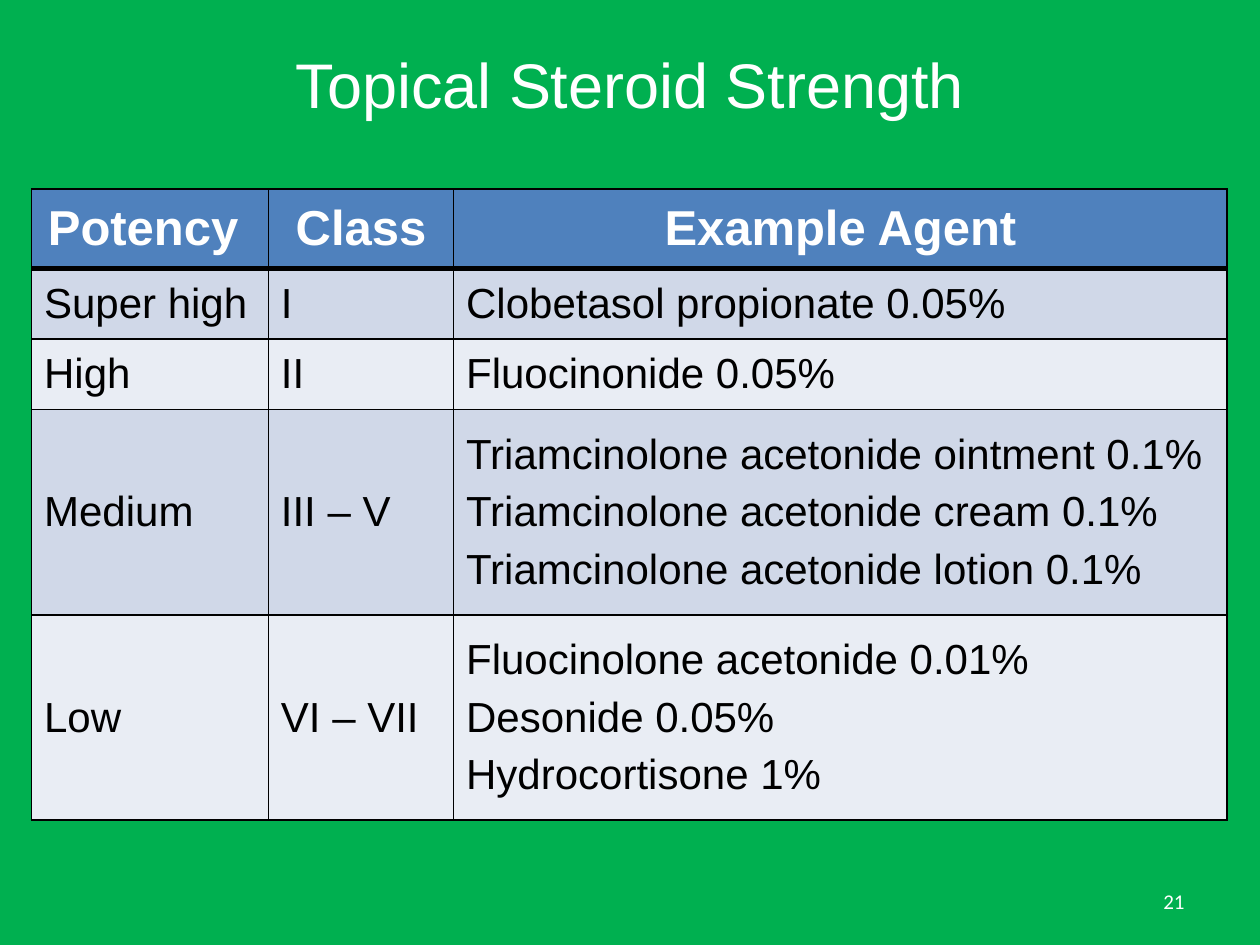
from lxml import etree
from pptx import Presentation
from pptx.dml.color import RGBColor
from pptx.enum.text import MSO_ANCHOR, PP_ALIGN
from pptx.oxml.ns import qn
from pptx.util import Inches, Pt

MIDDLE = MSO_ANCHOR.MIDDLE
LEFT, CENTER, RIGHT = PP_ALIGN.LEFT, PP_ALIGN.CENTER, PP_ALIGN.RIGHT

COLORS = {
    "background": "00B050",
    "header": "4F81BD",
    "odd_row": "D0D8E8",
    "even_row": "E9EDF4",
    "white": "FFFFFF",
    "black": "000000",
}

ROWS = [
    ("Potency ", "Class", "Example Agent"),
    ("Super high", "I", "Clobetasol propionate 0.05%"),
    ("High", "II", "Fluocinonide 0.05%"),
    ("Medium", "III – V",
     "Triamcinolone acetonide ointment 0.1%\n"
     "Triamcinolone acetonide cream 0.1%\n"
     "Triamcinolone acetonide lotion 0.1%"),
    ("Low", "VI – VII",
     "Fluocinolone acetonide 0.01%\nDesonide 0.05%\nHydrocortisone 1%"),
]
COLUMN_WIDTHS = [1.88, 1.47, 6.14]
ROW_HEIGHTS = [0.63, 0.56, 0.56, 1.63, 1.63]


def write_text(frame, text, size, color, font="Arial", align=LEFT, bold=False, before=0):
    frame.text = text
    for paragraph in frame.paragraphs:
        paragraph.alignment = align
        paragraph.space_before = Pt(before)
        paragraph.font.name = font
        paragraph.font.size = Pt(size)
        paragraph.font.bold = bold
        paragraph.font.color.rgb = RGBColor.from_string(COLORS[color])


def add_border(cell, side, points):
    """Draw one black edge; side is L, R, T or B, called in that order."""
    line = etree.SubElement(cell._tc.get_or_add_tcPr(), qn(f"a:ln{side}"), w=str(Pt(points)))
    fill = etree.SubElement(line, qn("a:solidFill"))
    etree.SubElement(fill, qn("a:srgbClr"), val=COLORS["black"])


deck = Presentation()
deck.slide_width, deck.slide_height = Inches(10), Inches(7.5)
page = deck.slides.add_slide(deck.slide_layouts[6])
page.background.fill.solid()
page.background.fill.fore_color.rgb = RGBColor.from_string(COLORS["background"])

# Title and page number
for text, bounds, size, font, align in [
    ("Topical Steroid Strength", (0.75, 0.33, 8.5, 0.67), 36, "Arial", CENTER),
    ("21", (7.17, 6.95, 2.33, 0.4), 12, "Calibri", RIGHT),
]:
    box = page.shapes.add_textbox(*[Inches(length) for length in bounds])
    box.text_frame.word_wrap = True
    box.text_frame.vertical_anchor = MIDDLE
    write_text(box.text_frame, text, size, "white", font, align)

# Potency table
table = page.shapes.add_table(
    len(ROWS), len(COLUMN_WIDTHS), Inches(0.25), Inches(1.5), Inches(9.5), Inches(5)
).table
for column, width in zip(table.columns, COLUMN_WIDTHS):
    column.width = Inches(width)
for row, height in zip(table.rows, ROW_HEIGHTS):
    row.height = Inches(height)

for row_index, values in enumerate(ROWS):
    is_header = row_index == 0
    fill_name = "header" if is_header else "odd_row" if row_index % 2 else "even_row"
    for column_index, text in enumerate(values):
        cell = table.cell(row_index, column_index)
        cell.vertical_anchor = MIDDLE
        if is_header:
            write_text(cell.text_frame, text, 28, "white", align=CENTER, bold=True, before=6)
        else:
            write_text(cell.text_frame, text, 24, "black", before=6)
        add_border(cell, "L", 1)
        add_border(cell, "R", 1)
        add_border(cell, "T", 3 if row_index == 1 else 1)
        add_border(cell, "B", 3 if is_header else 1)
        cell.fill.solid()
        cell.fill.fore_color.rgb = RGBColor.from_string(COLORS[fill_name])

deck.save("out.pptx")
